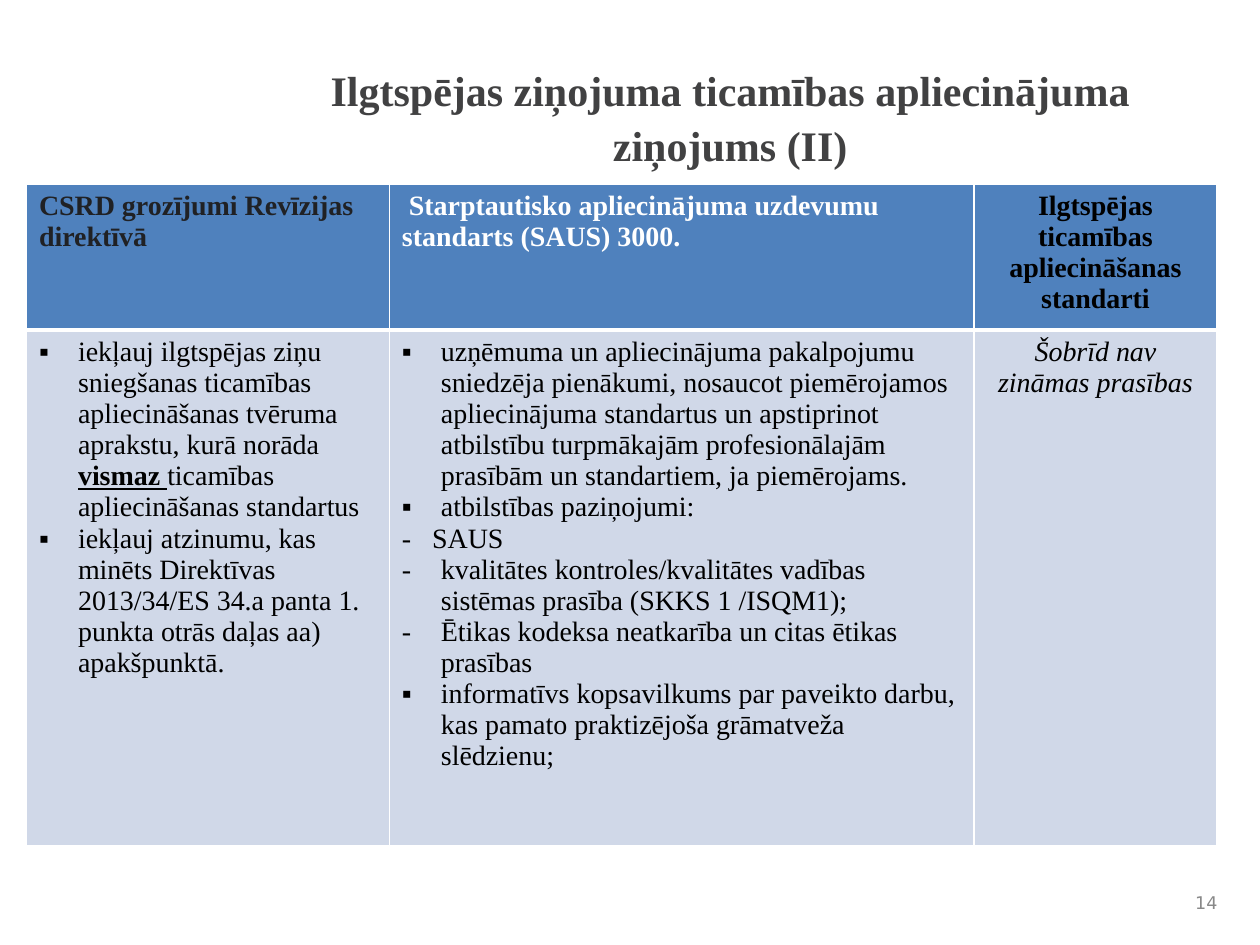
import pptx
import pptx.util
import pptx.dml.color
import pptx.enum.text
import pptx.oxml.ns
import lxml.etree

Inches = pptx.util.Inches
Pt = pptx.util.Pt
RGBColor = pptx.dml.color.RGBColor
ALIGN = pptx.enum.text.PP_ALIGN
ANCHOR = pptx.enum.text.MSO_ANCHOR
qn = pptx.oxml.ns.qn

TITLE_GREY = RGBColor(0x41, 0x41, 0x42)
HEADER_BLUE = RGBColor(0x4F, 0x81, 0xBD)
BODY_BLUE = RGBColor(0xD0, 0xD8, 0xE8)
INK = RGBColor(0x20, 0x21, 0x24)
BLACK = RGBColor(0x00, 0x00, 0x00)
WHITE = RGBColor(0xFF, 0xFF, 0xFF)
NUMBER_GREY = RGBColor(0x89, 0x89, 0x89)

SERIF = "Times New Roman"
SANS = "DejaVu Sans"
SQUARE, DASH = "▪", "-"
WIDE, NARROW = 0.31, 0.24

HEADINGS = [
    ("CSRD grozījumi Revīzijas direktīvā", INK, ALIGN.LEFT),
    (" Starptautisko apliecinājuma uzdevumu standarts (SAUS) 3000.", WHITE, ALIGN.LEFT),
    ("Ilgtspējas ticamības apliecināšanas standarti", BLACK, ALIGN.CENTER),
]
DIRECTIVE_ITEMS = [
    (SQUARE, WIDE, [
        ("iekļauj ilgtspējas ziņu sniegšanas ticamības apliecināšanas tvēruma aprakstu, kurā norāda ", {}),
        ("vismaz", {"bold": True, "underline": True}),
        (" ", {"underline": True}),
        ("ticamības apliecināšanas standartus", {}),
    ]),
    (SQUARE, WIDE, [
        ("iekļauj atzinumu, kas minēts Direktīvas 2013/34/ES 34.a panta 1. punkta otrās daļas aa) apakšpunktā.", {}),
    ]),
]
STANDARD_ITEMS = [
    (SQUARE, WIDE, [
        ("uzņēmuma un apliecinājuma pakalpojumu sniedzēja pienākumi, nosaucot piemērojamos "
         "apliecinājuma standartus un apstiprinot atbilstību turpmākajām profesionālajām "
         "prasībām un standartiem, ja piemērojams.", {}),
    ]),
    (SQUARE, WIDE, [("atbilstības paziņojumi:", {})]),
    (DASH, NARROW, [("SAUS", {})]),
    (DASH, WIDE, [("kvalitātes kontroles/kvalitātes vadības sistēmas prasība (SKKS 1 /ISQM1);", {})]),
    (DASH, WIDE, [("Ētikas kodeksa neatkarība un citas ētikas prasības", {})]),
    (SQUARE, WIDE, [
        ("informatīvs kopsavilkums par paveikto darbu, kas pamato praktizējoša grāmatveža slēdzienu;", {}),
    ]),
]


def add_run(paragraph, text, size, color, font=SERIF, bold=False, italic=False, underline=False):
    run = paragraph.add_run()
    run.text = text
    run.font.name = font
    run.font.size = Pt(size)
    run.font.color.rgb = color
    run.font.bold = bold
    run.font.italic = italic
    run.font.underline = underline


def set_bullet(paragraph, mark, indent):
    properties = paragraph._p.get_or_add_pPr()
    properties.set("marL", str(Inches(indent)))
    properties.set("indent", str(-Inches(indent)))
    lxml.etree.SubElement(properties, qn("a:buFont")).set("typeface", SERIF)
    lxml.etree.SubElement(properties, qn("a:buChar")).set("char", mark)


def set_borders(cell, top, bottom):
    properties = cell._tc.get_or_add_tcPr()
    widths = {"a:lnL": 1, "a:lnR": 1, "a:lnT": top, "a:lnB": bottom}
    for position, (side, width) in enumerate(widths.items()):
        border = lxml.etree.Element(qn(side), w=str(Pt(width)))
        fill = lxml.etree.SubElement(border, qn("a:solidFill"))
        lxml.etree.SubElement(fill, qn("a:srgbClr")).set("val", str(WHITE))
        properties.insert(position, border)


def format_cell(cell, color, top, bottom):
    cell.fill.solid()
    cell.fill.fore_color.rgb = color
    set_borders(cell, top, bottom)


def fill_list(cell, items):
    frame = cell.text_frame
    for position, (mark, indent, pieces) in enumerate(items):
        paragraph = frame.add_paragraph() if position else frame.paragraphs[0]
        set_bullet(paragraph, mark, indent)
        for text, style in pieces:
            add_run(paragraph, text, 16, BLACK, **style)


def place_title(slide, left, top, width, height):
    title = slide.shapes.title
    title.left, title.top, title.width, title.height = left, top, width, height
    frame = title.text_frame
    frame.word_wrap = True
    frame.auto_size = pptx.enum.text.MSO_AUTO_SIZE.NONE
    frame.vertical_anchor = ANCHOR.TOP
    heading = frame.paragraphs[0]
    heading.alignment = ALIGN.CENTER
    heading.line_spacing = 1.1
    heading.space_before = Pt(0)
    add_run(heading, "Ilgtspējas ziņojuma ticamības apliecinājuma ziņojums (II)",
            24, TITLE_GREY, bold=True)


def place_comparison(slide, left, top, width, height):
    comparison = slide.shapes.add_table(2, 3, left, top, width, height).table
    for column, column_width in zip(comparison.columns, (2.88, 4.64, 1.93)):
        column.width = Inches(column_width)
    for row, row_height in zip(comparison.rows, (1.16, 4.09)):
        row.height = Inches(row_height)

    for index, (text, color, alignment) in enumerate(HEADINGS):
        header = comparison.cell(0, index)
        format_cell(header, HEADER_BLUE, 1, 3)
        paragraph = header.text_frame.paragraphs[0]
        paragraph.alignment = alignment
        add_run(paragraph, text, 16, color, bold=True)
        format_cell(comparison.cell(1, index), BODY_BLUE, 3, 1)

    fill_list(comparison.cell(1, 0), DIRECTIVE_ITEMS)
    fill_list(comparison.cell(1, 1), STANDARD_ITEMS)
    outlook = comparison.cell(1, 2).text_frame.paragraphs[0]
    outlook.alignment = ALIGN.CENTER
    add_run(outlook, "Šobrīd nav zināmas prasības", 16, BLACK, italic=True)


def place_page_number(slide, left, top, width, height):
    frame = slide.shapes.add_textbox(left, top, width, height).text_frame
    frame.word_wrap = True
    frame.vertical_anchor = ANCHOR.MIDDLE
    page = frame.paragraphs[0]
    page.alignment = ALIGN.RIGHT
    add_run(page, "14", 10, NUMBER_GREY, font=SANS)


def main():
    deck = pptx.Presentation()
    deck.slide_width, deck.slide_height = Inches(10), Inches(7.5)
    slide = deck.slides.add_slide(deck.slide_layouts[5])
    place_title(slide, Inches(2.09), Inches(0.42), Inches(7.41), Inches(1.13))
    place_comparison(slide, Inches(0.21), Inches(1.46), Inches(9.45), Inches(5.25))
    place_page_number(slide, Inches(9.21), Inches(6.93), Inches(0.55), Inches(0.47))
    deck.save("out.pptx")


if __name__ == "__main__":
    main()
